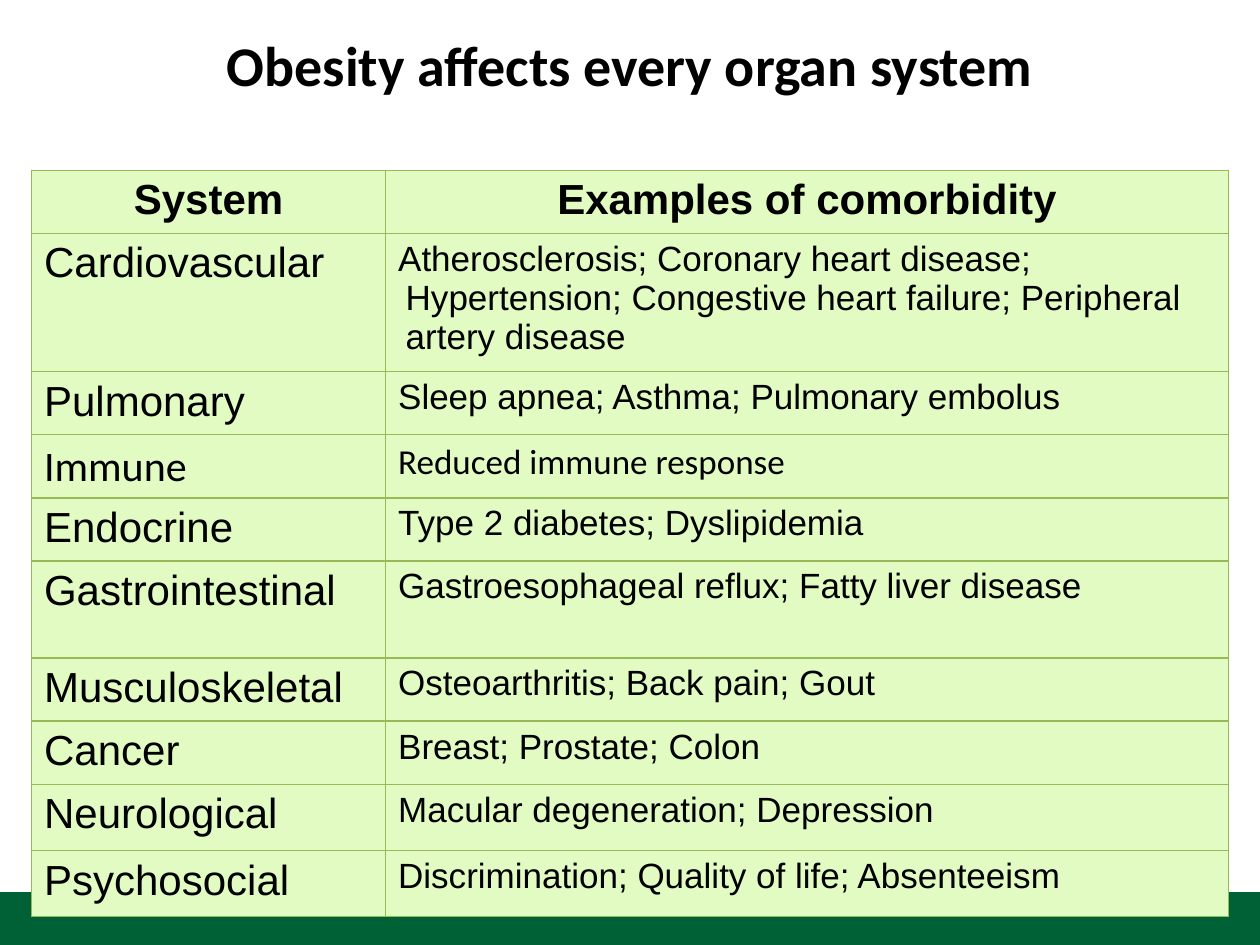
import pptx
import pptx.util
import pptx.dml.color
import pptx.enum.shapes
import pptx.enum.text
import pptx.oxml
import pptx.oxml.ns

Inches, Pt = pptx.util.Inches, pptx.util.Pt
ALIGN = pptx.enum.text.PP_ALIGN

COLORS = {"bar": "006036", "cell": "E2FBC2", "edge": "98B955", "text": "000000"}
TITLE = "Obesity affects every organ system"
HEADS = ("System", "Examples of comorbidity")
ROWS = [
    ("Cardiovascular", "Atherosclerosis; Coronary heart disease; Hypertension; "
     "Congestive heart failure; Peripheral artery disease", 0.77),
    ("Pulmonary", "Sleep apnea; Asthma; Pulmonary embolus", 0.47),
    ("Immune", "Reduced immune response", 0.47),
    ("Endocrine", "Type 2 diabetes; Dyslipidemia", 0.47),
    ("Gastrointestinal", "Gastroesophageal reflux; Fatty liver disease", 0.77),
    ("Musculoskeletal", "Osteoarthritis; Back pain; Gout", 0.44),
    ("Cancer", "Breast; Prostate; Colon", 0.47),
    ("Neurological", "Macular degeneration; Depression", 0.53),
    ("Psychosocial", "Discrimination; Quality of life; Absenteeism", 0.52),
]
WIDTHS = (2.81, 6.69)
INDENTS = {"Cardiovascular": 0.06, "Gastrointestinal": 0}


def color(name):
    return pptx.dml.color.RGBColor.from_string(COLORS[name])


def write(frame, text, size, font="Arial", bold=False, align=ALIGN.LEFT):
    frame.text = text
    para = frame.paragraphs[0]
    para.alignment = align
    face = para.runs[0].font
    face.name, face.size, face.bold = font, Pt(size), bold
    face.color.rgb = color("text")
    return para


def hang(para, indent):
    props = para._p.get_or_add_pPr()
    props.set("marL", str(Inches(indent)))
    props.set("indent", str(-Inches(indent)))


def style(cell):
    cell.fill.solid()
    cell.fill.fore_color.rgb = color("cell")
    props = cell._tc.get_or_add_tcPr()
    for spot, side in enumerate(("lnL", "lnR", "lnT", "lnB")):
        props.insert(spot, pptx.oxml.parse_xml(
            f'<a:{side} {pptx.oxml.ns.nsdecls("a")} w="{Pt(0.75)}"><a:solidFill>'
            f'<a:srgbClr val="{COLORS["edge"]}"/></a:solidFill></a:{side}>'))


def main():
    deck = pptx.Presentation()
    deck.slide_width, deck.slide_height = Inches(10), Inches(7.5)
    slide = deck.slides.add_slide(deck.slide_layouts[6])

    bar = slide.shapes.add_shape(pptx.enum.shapes.MSO_SHAPE.RECTANGLE,
                                 0, Inches(7.08), Inches(10), Inches(0.42))
    bar.shadow.inherit = False
    bar.fill.solid()
    bar.fill.fore_color.rgb = color("bar")
    bar.line.fill.background()

    title = slide.shapes.add_textbox(Inches(0.5), Inches(0.01), Inches(9), Inches(0.99))
    title.text_frame.word_wrap = True
    title.text_frame.vertical_anchor = pptx.enum.text.MSO_ANCHOR.MIDDLE
    write(title.text_frame, TITLE, 32, "Calibri", True, ALIGN.CENTER)

    lines = [(*HEADS, 0.42)] + ROWS
    high = sum(line[2] for line in lines)
    table = slide.shapes.add_table(len(lines), len(WIDTHS), Inches(0.25), Inches(1.35),
                                   Inches(sum(WIDTHS)), Inches(high)).table
    for column, width in zip(table.columns, WIDTHS):
        column.width = Inches(width)

    for row, (system, signs, height) in enumerate(lines):
        table.rows[row].height = Inches(height)
        head = row == 0
        font = "Calibri" if system == "Immune" else "Arial"
        for col, text in enumerate((system, signs)):
            cell = table.cell(row, col)
            style(cell)
            para = write(cell.text_frame, text, 24 if head or col == 0 else 20,
                         font, head, ALIGN.CENTER if head else ALIGN.LEFT)
            hang(para, INDENTS.get(system, 0.38) if col else 0.38)

    deck.save("out.pptx")


if __name__ == "__main__":
    main()
